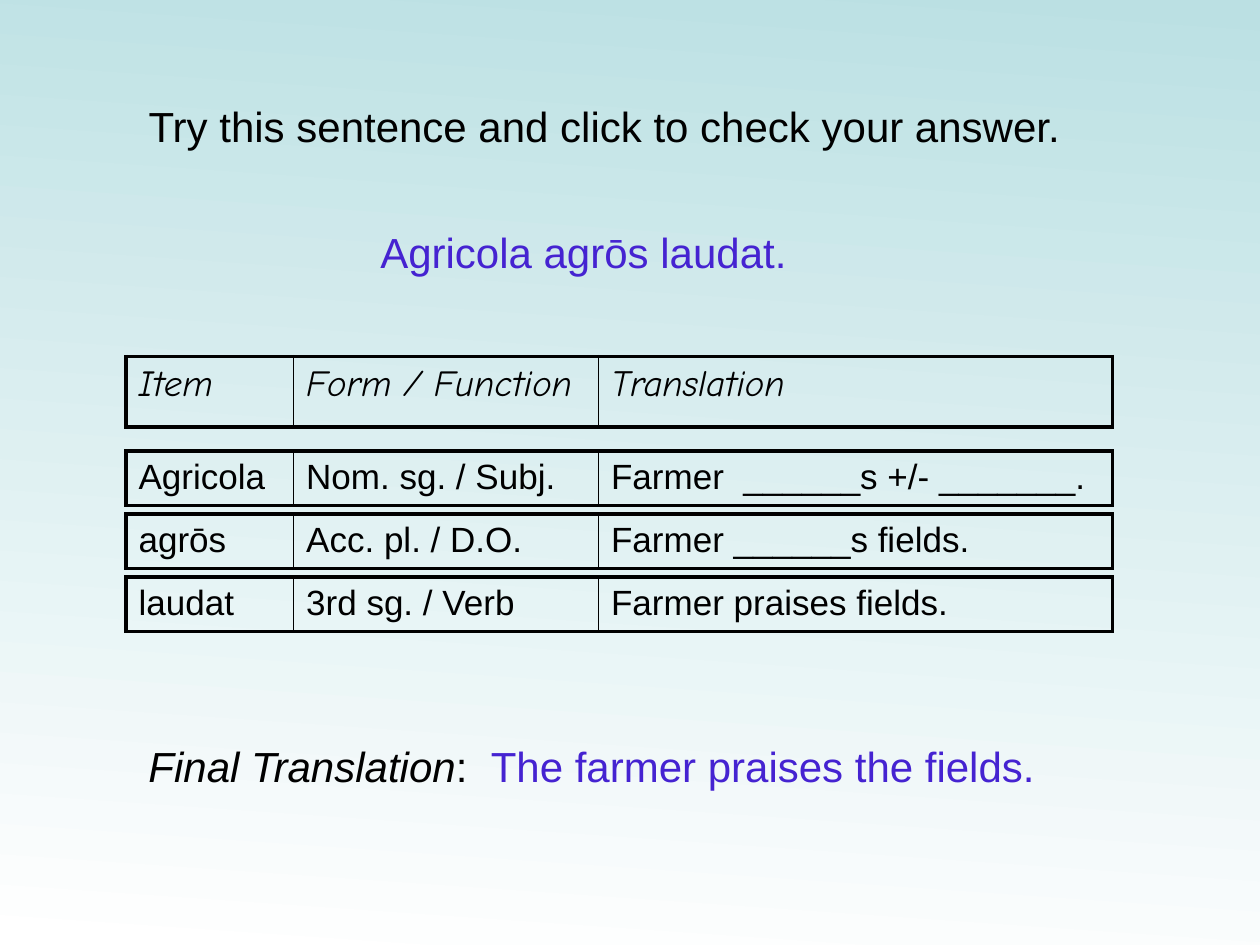
from lxml import etree
from pptx import Presentation
from pptx import util as u
from pptx.dml.color import RGBColor
from pptx.enum import text
from pptx.oxml.ns import qn

COLORS = {"ink": "000000", "answer": "4523D1", "bottom": "FFFFFF", "top": "BBE0E3"}

PROMPT = [("Try this sentence and click to check your answer.", "ink", False)]
SENTENCE = [("Agricola agrōs laudat.", "answer", False)]
FINAL = [
    ("Final Translation", "ink", True),
    (":  ", "ink", False),
    ("The farmer praises the fields.", "answer", False),
]
HEADINGS = ("Item", "Form / Function", "Translation")
ANSWERS = [
    ("Agricola", "Nom. sg. / Subj.", "Farmer  ______s +/- _______."),
    ("agrōs", "Acc. pl. / D.O.", "Farmer ______s fields."),
    ("laudat", "3rd sg. / Verb", "Farmer praises fields."),
]
COLUMN_WIDTHS = (1.33, 2.42, 4.08)
TABLE_LEFT, HEADING_TOP, ANSWER_TOP, ANSWER_STEP = 1, 2.83, 3.58, 0.5
OUTER_LINE, INNER_LINE = 2.25, 1


def add_run(paragraph, words, color, italic, size=24, font="Arial"):
    run = paragraph.add_run()
    run.text = words
    run.font.name = font
    run.font.size = u.Pt(size)
    run.font.italic = italic
    run.font.color.rgb = RGBColor.from_string(COLORS[color])


def place_text(shape, box, runs, wrap):
    shape.left, shape.top, shape.width, shape.height = map(u.Inches, box)
    frame = shape.text_frame
    frame.word_wrap = wrap
    frame.auto_size = text.MSO_AUTO_SIZE.SHAPE_TO_FIT_TEXT
    frame.vertical_anchor = text.MSO_ANCHOR.TOP
    paragraph = frame.paragraphs[0]
    paragraph.alignment = text.PP_ALIGN.LEFT
    for run in runs:
        add_run(paragraph, *run)


def set_borders(cell, widths):
    properties = cell._tc.get_or_add_tcPr()
    for index, (side, width) in enumerate(zip("LRTB", widths)):
        line = etree.Element(qn(f"a:ln{side}"), w=str(u.Pt(width)))
        fill = etree.SubElement(line, qn("a:solidFill"))
        etree.SubElement(fill, qn("a:srgbClr"), val=COLORS["ink"])
        properties.insert(index, line)


def add_row_table(slide, top, height, words, size, font, italic):
    last = len(words) - 1
    table = slide.shapes.add_table(
        1, len(words), u.Inches(TABLE_LEFT), u.Inches(top),
        u.Inches(sum(COLUMN_WIDTHS)), u.Inches(height),
    ).table
    table.first_row = table.horz_banding = False
    for index, (entry, width) in enumerate(zip(words, COLUMN_WIDTHS)):
        table.columns[index].width = u.Inches(width)
        cell = table.cell(0, index)
        cell.fill.background()
        left = OUTER_LINE if index == 0 else INNER_LINE
        right = OUTER_LINE if index == last else INNER_LINE
        set_borders(cell, (left, right, OUTER_LINE, OUTER_LINE))
        add_run(cell.text_frame.paragraphs[0], entry, "ink", italic, size, font)


def main():
    presentation = Presentation()
    presentation.slide_width, presentation.slide_height = u.Inches(10), u.Inches(7.5)
    slide = presentation.slides.add_slide(presentation.slide_layouts.get_by_name("Title Only"))

    background = slide.background.fill
    background.gradient()
    background.gradient_angle = 86
    for stop, name in zip(background.gradient_stops, ("bottom", "top")):
        stop.color.rgb = RGBColor.from_string(COLORS[name])

    place_text(slide.shapes.title, (1.08, 0.75, 7.46, 0.5), PROMPT, False)
    for box, runs, wrap in (
        ((2.92, 1.75, 3.43, 0.5), SENTENCE, False),
        ((1.08, 5.83, 7.58, 0.5), FINAL, True),
    ):
        place_text(slide.shapes.add_textbox(0, 0, 0, 0), box, runs, wrap)

    add_row_table(slide, HEADING_TOP, 0.56, HEADINGS, 21, "Comic Neue", True)
    for index, words in enumerate(ANSWERS):
        add_row_table(slide, ANSWER_TOP + index * ANSWER_STEP, 0.43, words, 20, "Arial", False)

    presentation.save("out.pptx")


if __name__ == "__main__":
    main()
